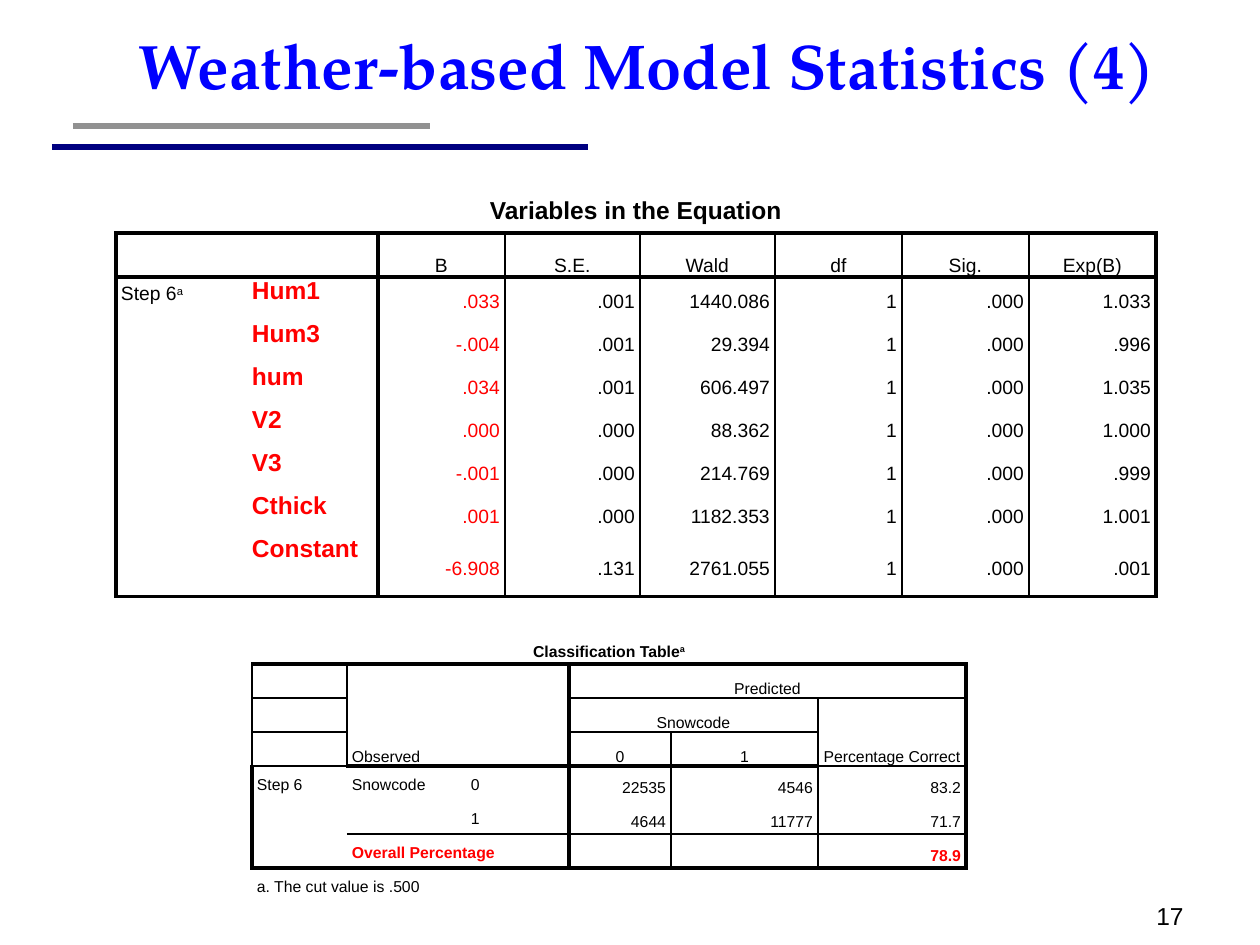
from lxml.etree import SubElement
from pptx import Presentation
from pptx.dml.color import RGBColor
from pptx.enum.shapes import MSO_CONNECTOR
from pptx.enum.text import MSO_ANCHOR, PP_ALIGN
from pptx.oxml.ns import qn
from pptx.util import Emu, Pt

BLACK = RGBColor(0, 0, 0)
WHITE = RGBColor(255, 255, 255)
RED = RGBColor(255, 0, 0)
BLUE = RGBColor(0, 0, 255)
NAVY = RGBColor(0, 0, 128)
GREY = RGBColor(0x91, 0x91, 0x91)

PX_PER_INCH = 126
THIN, THICK = 1, 2.25
NO_STYLE = "{2D5ABB26-0587-4C30-8999-92F81FD0307C}"
SIDES = ("lnL", "lnR", "lnT", "lnB")
TOP, MIDDLE, BOTTOM = MSO_ANCHOR.TOP, MSO_ANCHOR.MIDDLE, MSO_ANCHOR.BOTTOM
LEFT, CENTER, RIGHT = PP_ALIGN.LEFT, PP_ALIGN.CENTER, PP_ALIGN.RIGHT


def px(value):
    return Emu(round(value * 914400 / PX_PER_INCH))


def write(para, text, size, font="Arial", color=BLACK, bold=False,
          align=LEFT, superscript="", line=None):
    para.alignment = align
    para.line_spacing = line
    for part, raised in ((text, False), (superscript, True)):
        if not part:
            continue
        span = para.add_run()
        span.text = part
        span.font.size = Pt(size)
        span.font.name = font
        span.font.bold = bold
        span.font.color.rgb = color
        if raised:
            span.font._element.set("baseline", "30000")
    if not text:
        SubElement(para._p, qn("a:endParaRPr"), sz=str(size * 100))


def add_text(page, box, text, **style):
    frame = page.shapes.add_textbox(*map(px, box)).text_frame
    frame.word_wrap = True
    write(frame.paragraphs[0], text, **style)


def add_bar(page, left, right, y, color):
    bar = page.shapes.add_connector(
        MSO_CONNECTOR.STRAIGHT, px(left), px(y), px(right), px(y))
    bar.line.color.rgb = color
    bar.line.width = Pt(3.5)
    SubElement(bar._element.spPr, qn("a:effectLst"))


class Grid:
    """A plain table whose borders are drawn as rules along its grid lines."""

    def __init__(self, page, left, top, widths, heights, size, merges):
        self.size = size
        self.row_count, self.column_count = len(heights), len(widths)
        self.table = page.shapes.add_table(
            self.row_count, self.column_count, px(left), px(top),
            px(sum(widths)), px(sum(heights))).table
        self.table.first_row = self.table.horz_banding = False
        self.table._tbl.tblPr.find(qn("a:tableStyleId")).text = NO_STYLE
        for column, width in zip(self.table.columns, widths):
            column.width = px(width)
        for row, height in zip(self.table.rows, heights):
            row.height = px(height)
        for cell in self.table.iter_cells():
            cell.margin_left = cell.margin_right = px(5)
            cell.margin_top = cell.margin_bottom = 0
            for side in SIDES:
                line = SubElement(cell._tc.tcPr, qn(f"a:{side}"))
                SubElement(line, qn("a:noFill"))
            cell.fill.solid()
            cell.fill.fore_color.rgb = WHITE
            cell.text_frame.paragraphs[0].line_spacing = Pt(16)
        self.owners = {}
        for row, column, last_row, last_column in merges:
            self.table.cell(row, column).merge(
                self.table.cell(last_row, last_column))
            for r in range(row, last_row + 1):
                for c in range(column, last_column + 1):
                    self.owners[r, c] = (row, column)

    def put(self, row, column, text, anchor=TOP, **style):
        cell = self.table.cell(row, column)
        cell.vertical_anchor = anchor
        write(cell.text_frame.paragraphs[0], text,
              **{"size": self.size, "line": Pt(16), **style})

    def border(self, row, column, side, weight):
        if not (0 <= row < self.row_count and 0 <= column < self.column_count):
            return
        for place in {(row, column), self.owners.get((row, column), (row, column))}:
            line = self.table.cell(*place)._tc.tcPr.find(qn(f"a:{side}"))
            line.set("w", str(Pt(weight)))
            for old in list(line):
                line.remove(old)
            fill = SubElement(line, qn("a:solidFill"))
            SubElement(fill, qn("a:srgbClr"), val=str(BLACK))

    def across(self, row, first, last, weight):
        """Rule above a row, from the first to the last column."""
        for column in range(first, last + 1):
            self.border(row - 1, column, "lnB", weight)
            self.border(row, column, "lnT", weight)

    def down(self, column, first, last, weight):
        """Rule to the left of a column, from the first to the last row."""
        for row in range(first, last + 1):
            self.border(row, column - 1, "lnR", weight)
            self.border(row, column, "lnL", weight)


def add_variables_table(page, left, top):
    headings = ("B", "S.E.", "Wald", "df", "Sig.", "Exp(B)")
    variables = (
        ("Hum1", ".033", ".001", "1440.086", "1", ".000", "1.033"),
        ("Hum3", "-.004", ".001", "29.394", "1", ".000", ".996"),
        ("hum", ".034", ".001", "606.497", "1", ".000", "1.035"),
        ("V2", ".000", ".000", "88.362", "1", ".000", "1.000"),
        ("V3", "-.001", ".000", "214.769", "1", ".000", ".999"),
        ("Cthick", ".001", ".000", "1182.353", "1", ".000", "1.001"),
        ("Constant", "-6.908", ".131", "2761.055", "1", ".000", ".001"),
    )
    grid = Grid(page, left, top,
                widths=[131, 131, 127, 135, 135, 127, 127, 127],
                heights=[44, 44] + [43] * 6 + [62, 43], size=11,
                merges=[(0, 0, 0, 7), (1, 0, 1, 1), (2, 0, 8, 0), (9, 0, 9, 7)])
    grid.put(0, 0, "Variables in the Equation", MIDDLE,
             size=14, bold=True, align=CENTER)
    grid.put(1, 0, "")
    grid.put(2, 0, "Step 6", superscript="a")
    grid.put(9, 0, "")
    for column, heading in enumerate(headings, 2):
        grid.put(1, column, heading, BOTTOM, align=CENTER)
    for row, (name, *values) in enumerate(variables, 2):
        grid.put(row, 1, name, size=14, bold=True, color=RED)
        for column, value in enumerate(values, 2):
            grid.put(row, column, value, MIDDLE, align=RIGHT,
                     color=RED if column == 2 else BLACK)
    for row in (1, 2, 9):
        grid.across(row, 0, 7, THICK)
    for column in (0, 2, 3, 4, 5, 6, 7, 8):
        grid.down(column, 1, 8, THICK if column in (0, 2, 8) else THIN)


def add_classification_table(page, left, top):
    grid = Grid(page, left, top, widths=[95, 119, 103, 102, 147, 148],
                heights=[34] * 8, size=9,
                merges=[(0, 0, 0, 5), (1, 1, 3, 2), (1, 3, 1, 5), (2, 3, 2, 4),
                        (2, 5, 3, 5), (4, 0, 6, 0), (4, 1, 5, 1), (6, 1, 6, 2),
                        (7, 0, 7, 5)])
    grid.put(0, 0, "Classification Table", MIDDLE,
             bold=True, align=CENTER, superscript="a")
    grid.put(1, 1, "Observed", BOTTOM)
    for row, column, heading in ((1, 3, "Predicted"), (2, 3, "Snowcode"),
                                 (2, 5, "Percentage Correct"),
                                 (3, 3, "0"), (3, 4, "1")):
        grid.put(row, column, heading, BOTTOM, align=CENTER)
    for row, column, label in ((4, 0, "Step 6"), (4, 1, "Snowcode"),
                               (4, 2, "0"), (5, 2, "1"),
                               (7, 0, "a. The cut value is .500")):
        grid.put(row, column, label)
    for row, counts in ((4, ("22535", "4546", "83.2")),
                        (5, ("4644", "11777", "71.7"))):
        for column, count in enumerate(counts, 3):
            grid.put(row, column, count, MIDDLE, align=RIGHT)
    grid.put(6, 1, "Overall Percentage", bold=True, color=RED)
    grid.put(6, 5, "78.9", MIDDLE, bold=True, color=RED, align=RIGHT)
    for row, column in ((1, 0), (2, 0), (3, 0), (6, 3), (6, 4)):
        grid.put(row, column, "")

    for row, first, last, weight in (
            (1, 0, 0, THIN), (1, 1, 5, THICK), (2, 0, 0, THIN), (2, 3, 5, THIN),
            (3, 0, 0, THIN), (3, 3, 4, THIN), (4, 0, 0, THIN), (4, 1, 4, THICK),
            (4, 5, 5, THIN), (6, 1, 5, THIN), (7, 0, 5, THICK)):
        grid.across(row, first, last, weight)
    for column, first, last, weight in (
            (0, 1, 3, THIN), (0, 4, 6, THICK), (1, 1, 3, THIN), (3, 1, 6, THICK),
            (4, 3, 6, THIN), (5, 2, 6, THIN), (6, 1, 6, THICK)):
        grid.down(column, first, last, weight)


def main():
    deck = Presentation()
    deck.slide_width, deck.slide_height = px(1260), px(945)
    page = deck.slides.add_slide(deck.slide_layouts[6])
    add_bar(page, 73, 430, 126, GREY)
    add_bar(page, 52, 588, 147, NAVY)
    add_text(page, (126, 20, 1116, 89), "Weather-based Model Statistics (4)",
             size=36, font="TeX Gyre Pagella", color=BLUE, bold=True)
    add_text(page, (1144, 895, 116, 50), "17", size=14)
    add_variables_table(page, 116, 189)
    add_classification_table(page, 252, 630)
    deck.save("out.pptx")


if __name__ == "__main__":
    main()
